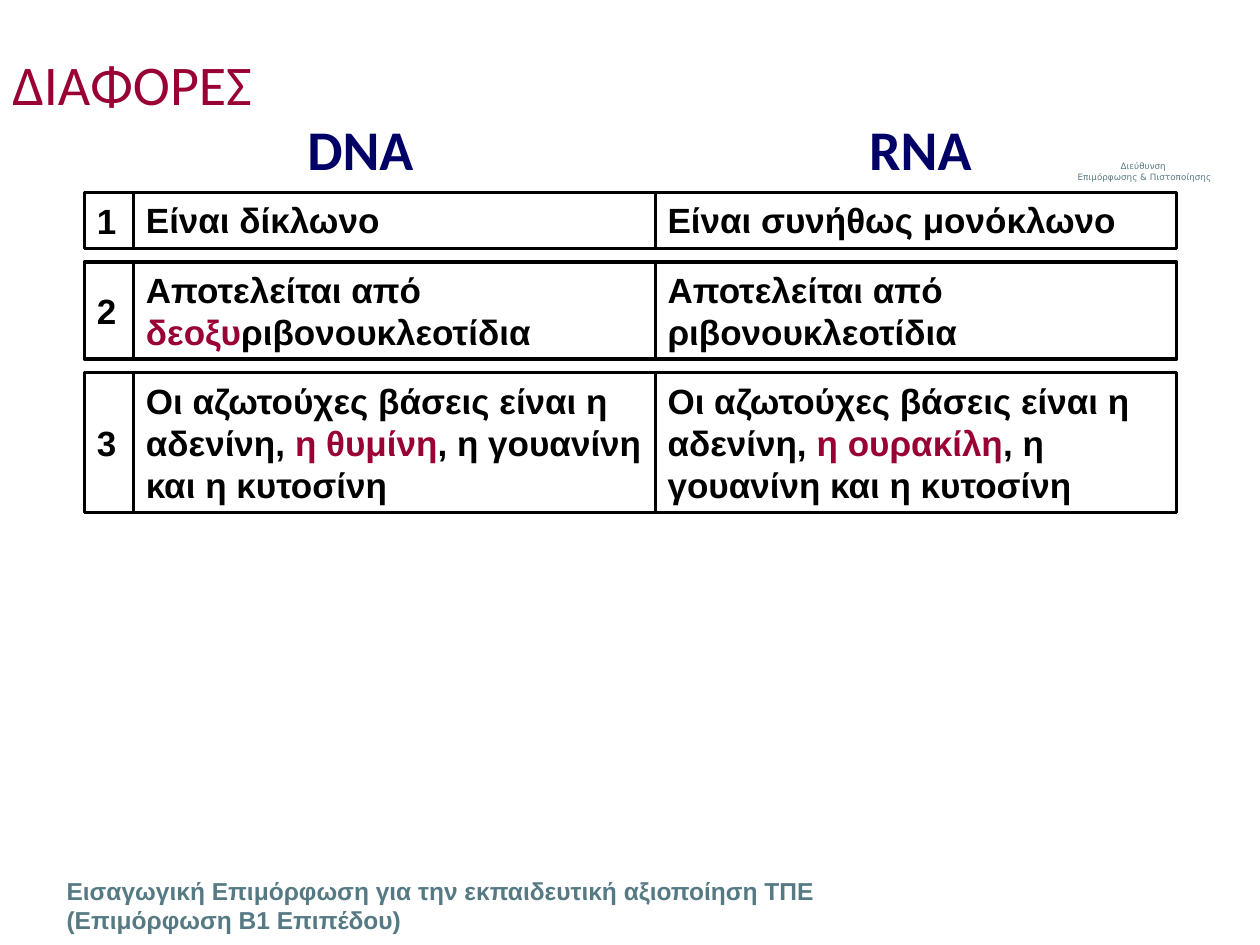
from pptx import Presentation
from pptx.dml.color import RGBColor
from pptx.enum.shapes import MSO_SHAPE
from pptx.enum.text import MSO_ANCHOR, PP_ALIGN
from pptx.util import Inches, Pt

RECTANGLE = MSO_SHAPE.RECTANGLE
TOP, MIDDLE = MSO_ANCHOR.TOP, MSO_ANCHOR.MIDDLE
LEFT, CENTER = PP_ALIGN.LEFT, PP_ALIGN.CENTER

BLACK, WHITE, CRIMSON, NAVY, SLATE = "000000", "FFFFFF", "990033", "000066", "567A84"


def rgb(value):
    return RGBColor.from_string(value)


class SlideBuilder:
    """Holds the text styles and the current slide."""

    STYLES = {
        "title": dict(name="Calibri", size=Pt(32), bold=False, color=CRIMSON),
        "heading": dict(name="Calibri", size=Pt(32), bold=True, color=NAVY),
        "cell": dict(name="Arial", size=Pt(20), bold=True, color=BLACK),
        "footer": dict(name="Arial", size=Pt(14), bold=True, color=SLATE),
        "department": dict(name="DejaVu Sans", size=Pt(5), bold=False, color=SLATE),
    }

    def __init__(self, slide):
        self.slide = slide

    def fill_text(self, frame, paragraphs, style, anchor=TOP, align=LEFT, wrap=True):
        """Each paragraph is a list of runs; a (text, colour) run is emphasised."""
        frame.word_wrap = wrap
        frame.vertical_anchor = anchor
        for number, runs in enumerate(paragraphs):
            paragraph = frame.add_paragraph() if number else frame.paragraphs[0]
            paragraph.alignment = align
            for item in runs:
                look = dict(self.STYLES[style])
                color = look.pop("color")
                words, color = (item, color) if isinstance(item, str) else item
                run = paragraph.add_run()
                run.text = words
                for attribute, value in look.items():
                    setattr(run.font, attribute, value)
                run.font.color.rgb = rgb(color)

    def text(self, box, paragraphs, style, **layout):
        label = self.slide.shapes.add_textbox(*map(Inches, box))
        self.fill_text(label.text_frame, paragraphs, style, **layout)

    def cell(self, row, box, runs, anchor=TOP):
        rectangle = row.shapes.add_shape(RECTANGLE, *map(Inches, box))
        rectangle.shadow.inherit = False
        rectangle.fill.solid()
        rectangle.fill.fore_color.rgb = rgb(WHITE)
        rectangle.line.color.rgb = rgb(BLACK)
        rectangle.line.width = Pt(1.75)
        self.fill_text(rectangle.text_frame, [runs], "cell", anchor=anchor)

    def comparison(self, number, top, height, dna, rna):
        row = self.slide.shapes.add_group_shape()
        columns = ((0.67, 0.39, [str(number)], MIDDLE),
                   (1.06, 4.14, dna, TOP),
                   (5.2, 4.14, rna, TOP))
        for left, width, runs, anchor in columns:
            self.cell(row, (left, top, width, height), runs, anchor)


def main():
    presentation = Presentation()
    presentation.slide_width, presentation.slide_height = Inches(10), Inches(7.5)
    builder = SlideBuilder(presentation.slides.add_slide(presentation.slide_layouts[6]))

    # Department and programme
    builder.text((8.2, 1.23, 1.77, 0.27),
                 [["Διεύθυνση "], ["Επιμόρφωσης & Πιστοποίησης"]],
                 "department", align=CENTER)
    builder.text((0.43, 6.9, 6.14, 0.57),
                 [["Εισαγωγική Επιμόρφωση για την εκπαιδευτική αξιοποίηση ΤΠΕ "
                   "(Επιμόρφωση Β1 Επιπέδου)"]], "footer")

    # Title and column headings
    builder.text((0, 0.23, 9, 0.86), [["ΔΙΑΦΟΡΕΣ"]], "title", anchor=MIDDLE)
    for molecule, left, width in (("DNA", 2.34, 1.05), ("RNA", 6.8, 1.02)):
        builder.text((left, 0.86, width, 0.64), [[molecule]], "heading", wrap=False)

    # Numbered differences
    bases = "Οι αζωτούχες βάσεις είναι η αδενίνη, "
    other_bases = ", η γουανίνη και η κυτοσίνη"
    differences = (
        (0.44, ["Είναι δίκλωνο"], ["Είναι συνήθως μονόκλωνο"]),
        (0.77, ["Αποτελείται από ", ("δεοξυ", CRIMSON), "ριβονουκλεοτίδια"],
         ["Αποτελείται από ριβονουκλεοτίδια"]),
        (1.11, [bases, ("η θυμίνη", CRIMSON), other_bases],
         [bases, ("η ουρακίλη", CRIMSON), other_bases]),
    )
    top, gap = 1.53, 0.11
    for number, (height, dna, rna) in enumerate(differences, start=1):
        builder.comparison(number, top, height, dna, rna)
        top += height + gap

    presentation.save("out.pptx")


if __name__ == "__main__":
    main()
